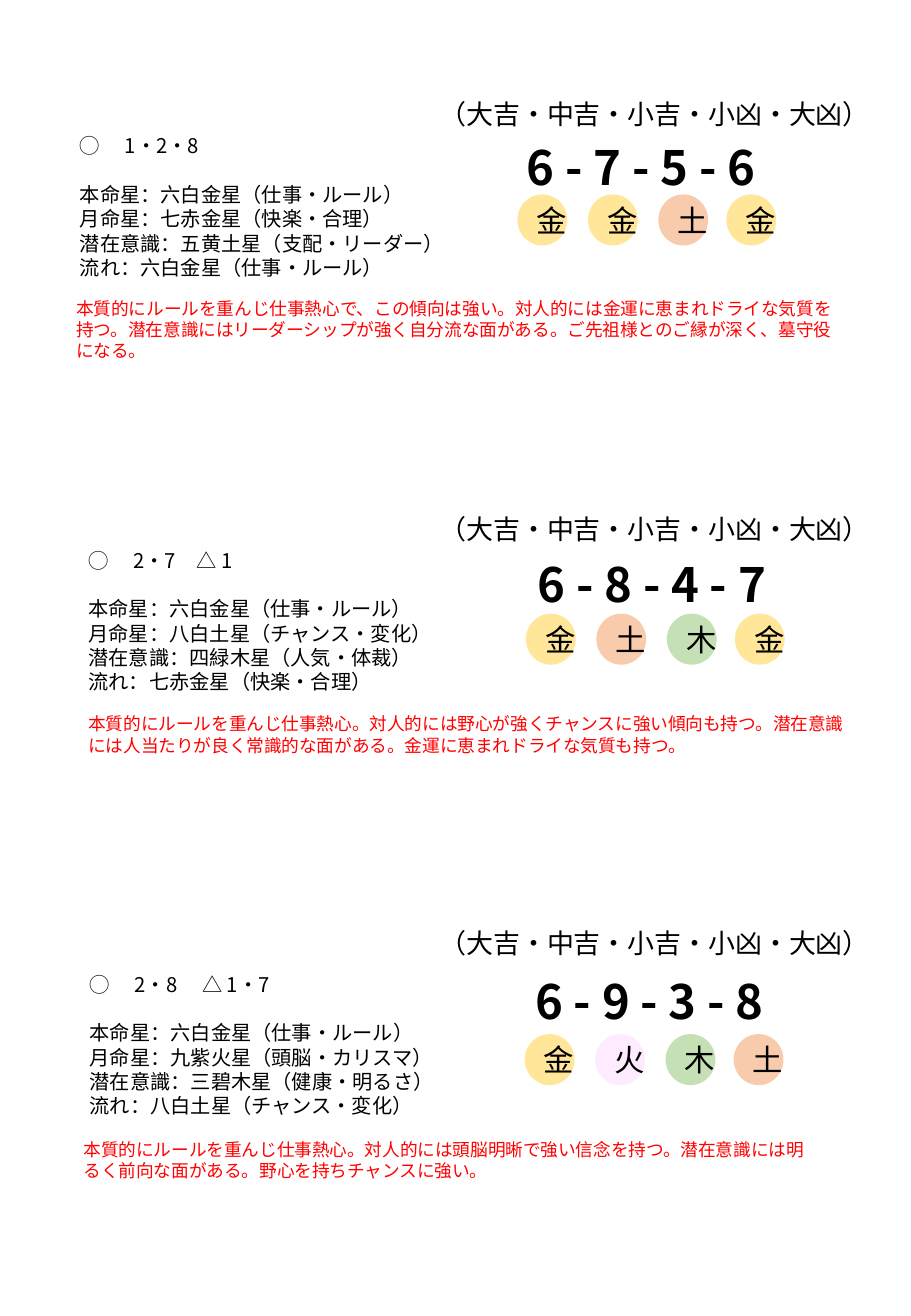
import pptx
import pptx.util
import pptx.dml.color
import pptx.enum.shapes
import pptx.enum.text

COLORS = {
    "ink": "000000", "reading": "FF0000",
    "金": "FFE699", "土": "F8CBAD", "木": "C5E0B4", "火": "FEEBFF",
}
FONT = "Noto Sans CJK JP"
LINE_HEIGHT = 1.2
COLUMNS, ROWS = 75, 108.3
ELEMENT_OFFSETS = (0, 5.8, 11.6, 17.2)


class Sheet:
    """Style and current slide; places are in grid columns and rows."""

    def __init__(self, deck):
        self.slide = deck.slides.add_slide(deck.slide_layouts[6])
        self.column = deck.slide_width / COLUMNS
        self.row = deck.slide_height / ROWS

    def box(self, left, top, width, height):
        return (round(left * self.column), round(top * self.row),
                round(width * self.column), round(height * self.row))

    def style(self, paragraph, size, color="ink", bold=False):
        font = paragraph.font
        font.name, font.size, font.bold = FONT, pptx.util.Pt(size), bold
        font.color.rgb = pptx.dml.color.RGBColor.from_string(COLORS[color])

    def text(self, place, lines, size, color="ink", bold=False, wrap=True):
        frame = self.slide.shapes.add_textbox(*self.box(*place)).text_frame
        frame.word_wrap = wrap
        frame.text = "\n".join(lines)
        for paragraph in frame.paragraphs:
            self.style(paragraph, size, color, bold)
            paragraph.line_spacing = pptx.util.Pt(size * LINE_HEIGHT)
        return frame

    def element(self, left, top, name):
        disc = self.slide.shapes.add_shape(
            pptx.enum.shapes.MSO_SHAPE.OVAL, *self.box(left, top, 4.1, 4.2))
        disc.shadow.inherit = False
        disc.fill.solid()
        disc.fill.fore_color.rgb = pptx.dml.color.RGBColor.from_string(COLORS[name])
        disc.line.fill.background()
        frame = disc.text_frame
        frame.word_wrap = True
        frame.vertical_anchor = pptx.enum.text.MSO_ANCHOR.MIDDLE
        frame.text = name
        label = frame.paragraphs[0]
        label.alignment = pptx.enum.text.PP_ALIGN.CENTER
        self.style(label, 18)

    def fortune(self, luck_top, stars_at, stars, numbers_at, numbers,
                elements_at, elements, reading_at, reading):
        # Luck scale
        self.text((35.2, luck_top, 37.9, 3.7),
                  ["（大吉・中吉・小吉・小凶・大凶）"], 16, wrap=False)
        # Lucky numbers and stars
        star_list = self.text((*stars_at, 13.1), stars, 12)
        star_list.paragraphs[1].space_before = pptx.util.Pt(12 * LINE_HEIGHT)
        # Number sequence with its elements
        self.text((*numbers_at, 25.2, 5.7), [" - ".join(numbers)], 28, bold=True)
        left, top = elements_at
        for offset, name in zip(ELEMENT_OFFSETS, elements):
            self.element(left + offset, top, name)
        # Reading
        self.text(reading_at, [reading], 10.5, "reading")


FORTUNES = [
    dict(
        luck_top=7.5, stars_at=(5.6, 10.5, 34.6),
        stars=["◯　 1・2・8",
               "本命星：六白金星（仕事・ルール）",
               "月命星：七赤金星（快楽・合理）",
               "潜在意識：五黄土星（支配・リーダー）",
               "流れ：六白金星（仕事・ルール）"],
        numbers_at=(42.4, 10.9), numbers="6756",
        elements_at=(42.6, 16), elements="金金土金",
        reading_at=(5.3, 24, 65, 6.3),
        reading="本質的にルールを重んじ仕事熱心で、この傾向は強い。対人的には金運に恵まれ"
                "ドライな気質を持つ。潜在意識にはリーダーシップが強く自分流な面がある。"
                "ご先祖様とのご縁が深く、墓守役になる。"),
    dict(
        luck_top=41.7, stars_at=(6.3, 44.6, 32.5),
        stars=["◯　 2・7　△ 1",
               "本命星：六白金星（仕事・ルール）",
               "月命星：八白土星（チャンス・変化）",
               "潜在意識：四緑木星（人気・体裁）",
               "流れ：七赤金星（快楽・合理）"],
        numbers_at=(43.3, 45.2), numbers="6847",
        elements_at=(43.3, 50.5), elements="金土木金",
        reading_at=(6.3, 58.2, 65, 4.5),
        reading="本質的にルールを重んじ仕事熱心。対人的には野心が強くチャンスに強い傾向も"
                "持つ。潜在意識には人当たりが良く常識的な面がある。"
                "金運に恵まれドライな気質も持つ。"),
    dict(
        luck_top=75.8, stars_at=(6.4, 79.5, 33.5),
        stars=["◯　 2・8 　△ 1・7",
               "本命星：六白金星（仕事・ルール）",
               "月命星：九紫火星（頭脳・カリスマ）",
               "潜在意識：三碧木星（健康・明るさ）",
               "流れ：八白土星（チャンス・変化）"],
        numbers_at=(43.1, 79.5), numbers="6938",
        elements_at=(43.2, 85.1), elements="金火木土",
        reading_at=(5.9, 93.2, 62.4, 4.5),
        reading="本質的にルールを重んじ仕事熱心。対人的には頭脳明晰で強い信念を持つ。"
                "潜在意識には明るく前向な面がある。野心を持ちチャンスに強い。"),
]


def main():
    deck = pptx.Presentation()
    deck.slide_width = pptx.util.Inches(7.5)
    deck.slide_height = pptx.util.Inches(10.83)
    sheet = Sheet(deck)
    for fortune in FORTUNES:
        sheet.fortune(**fortune)
    deck.save("out.pptx")


if __name__ == "__main__":
    main()
